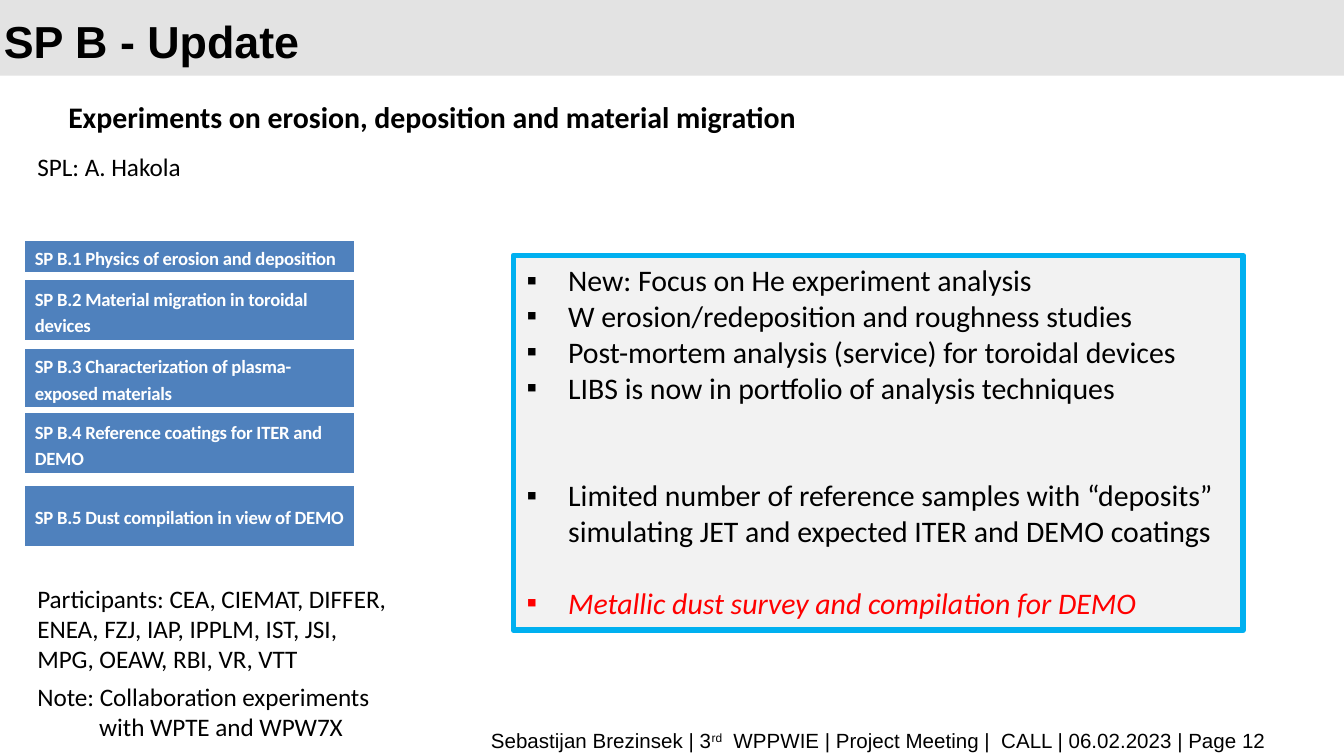
from dataclasses import dataclass

from lxml import etree
from pptx import Presentation
from pptx.dml.color import RGBColor
from pptx.enum.shapes import MSO_SHAPE
from pptx.enum.text import MSO_ANCHOR, PP_ALIGN
from pptx.oxml.ns import qn
from pptx.util import Inches, Pt

RECT = MSO_SHAPE.RECTANGLE
TOP, MID = MSO_ANCHOR.TOP, MSO_ANCHOR.MIDDLE
LEFT, RIGHT, JUST = PP_ALIGN.LEFT, PP_ALIGN.RIGHT, PP_ALIGN.JUSTIFY
WIDE = Inches(10)
HIGH = WIDE * 9 // 16
EDGE, SPAN = 1.8, 24.6
HUE = {"black": "000000", "white": "FFFFFF", "band": "E3E3E3", "blue": "4F81BD",
       "pale": "F2F2F2", "cyan": "00B0F0", "red": "FF0000"}


@dataclass
class Area:
    x: float
    y: float
    w: float
    h: float

    def box(self) -> tuple:
        return (int(WIDE * self.x / 100), int(HIGH * self.y / 100),
                int(WIDE * self.w / 100), int(HIGH * self.h / 100))


@dataclass
class Task:
    text: str
    y: float
    h: float


@dataclass
class Point:
    text: str
    gap: float = 0
    hue: str = "black"
    slant: bool = False


TASKS = [
    Task("SP B.1 Physics of erosion and deposition", 31.82, 4.44),
    Task("SP B.2 Material migration in toroidal devices", 36.98, 8.36),
    Task("SP B.3 Characterization of plasma-exposed materials", 46.04, 8.18),
    Task("SP B.4 Reference coatings for ITER and DEMO", 54.58, 8.36),
    Task("SP B.5 Dust compilation in view of DEMO", 64.18, 8.36),
]
POINTS = [
    Point("New: Focus on He experiment analysis"),
    Point("W erosion/redeposition and roughness studies"),
    Point("Post-mortem analysis (service) for toroidal devices"),
    Point("LIBS is now in portfolio of analysis techniques"),
    Point("Limited number of reference samples with “deposits” simulating JET "
          "and expected ITER and DEMO coatings", 38.5),
    Point("Metallic dust survey and compilation for DEMO", 19.2, "red", True),
]


def tint(name: str) -> RGBColor:
    return RGBColor.from_string(HUE[name])


def style(para, size: float, face: str = "Calibri", hue: str = "black", bold: bool = False) -> None:
    font = para.font
    font.size, font.name, font.bold = Pt(size), face, bold
    font.color.rgb = tint(hue)


def indent(para, left: float, first: float) -> None:
    props = para._p.get_or_add_pPr()
    props.set("marL", str(Inches(left)))
    props.set("indent", str(Inches(first)))


def write(slide, area: Area, lines: list[str], size: float = 13.5, face: str = "Calibri",
          bold: bool = False, align=LEFT, anchor=TOP) -> list:
    frame = slide.shapes.add_textbox(*area.box()).text_frame
    frame.word_wrap, frame.vertical_anchor = True, anchor
    frame.text = "\n".join(lines)
    for para in frame.paragraphs:
        para.alignment = align
        style(para, size, face, bold=bold)
    return list(frame.paragraphs)


def block(slide, area: Area, fill: str, line: str = ""):
    shape = slide.shapes.add_shape(RECT, *area.box())
    shape.shadow.inherit = False
    shape.fill.solid()
    shape.fill.fore_color.rgb = tint(fill)
    if line:
        shape.line.color.rgb = tint(line)
        shape.line.width = Pt(3)
    else:
        shape.line.fill.background()
    return shape


def edges(cell) -> None:
    props = cell._tc.get_or_add_tcPr()
    for spot, (side, width) in enumerate([("L", 1), ("R", 1), ("T", 1), ("B", 3)]):
        line = etree.Element(qn(f"a:ln{side}"), w=str(Pt(width)))
        fill = etree.SubElement(line, qn("a:solidFill"))
        etree.SubElement(fill, qn("a:srgbClr"), val=HUE["white"])
        props.insert(spot, line)


def draw_task(slide, task: Task) -> None:
    area = Area(EDGE, task.y, SPAN, task.h)
    table = slide.shapes.add_table(1, 1, *area.box()).table
    cell = table.cell(0, 0)
    cell.fill.solid()
    cell.fill.fore_color.rgb = tint("blue")
    cell.vertical_anchor = MID
    cell.margin_left = cell.margin_right = Inches(0.08)
    cell.margin_top = cell.margin_bottom = 0
    edges(cell)
    para = cell.text_frame.paragraphs[0]
    para.text = task.text
    para.line_spacing = 1.15
    para.space_before = para.space_after = Pt(2.4)
    style(para, 10, hue="white", bold=True)
    para.runs[0].font._element.set("spc", "-10")


def draw_points(slide, area: Area, points: list[Point]) -> None:
    frame = block(slide, area, "pale", "cyan").text_frame
    frame.word_wrap, frame.vertical_anchor = True, TOP
    frame.text = "\n".join(point.text for point in points)
    for para, point in zip(frame.paragraphs, points):
        para.alignment = LEFT
        if point.gap:
            para.space_before = Pt(point.gap)
        indent(para, 0.31, -0.31)
        props = para._p.get_or_add_pPr()
        etree.SubElement(props, qn("a:buFont"), typeface="Arial")
        etree.SubElement(props, qn("a:buChar"), char="▪")
        style(para, 16, hue=point.hue)
        para.font.italic = point.slant


def main() -> None:
    deck = Presentation()
    deck.slide_width, deck.slide_height = WIDE, HIGH
    slide = deck.slides.add_slide(deck.slide_layouts[6])

    block(slide, Area(0, 0, 100, 10), "band")
    title = write(slide, Area(-0.7, 1.6, 82.5, 6.76), ["SP B - Update"], 24, "Arial", True, anchor=MID)
    title[0].line_spacing = Pt(32)
    head = write(slide, Area(4.1, 11.91, 95.6, 19.91),
                 ["Experiments on erosion, deposition and material migration"],
                 16, bold=True, align=JUST)
    head[0].line_spacing = 1.05
    write(slide, Area(EDGE, 19.2, 24.2, 5.87), ["SPL: A. Hakola"])

    for task in TASKS:
        draw_task(slide, task)

    write(slide, Area(EDGE, 76.27, 28.4, 13.87),
          ["Participants: CEA, CIEMAT, DIFFER, ENEA, FZJ, IAP, IPPLM, IST, JSI, MPG, OEAW, RBI, VR, VTT"])
    note = write(slide, Area(EDGE, 89.24, 28.5, 10.13),
                 ["Note: Collaboration experiments", "with WPTE and WPW7X"])
    indent(note[1], 0.46, 0)
    draw_points(slide, Area(38.2, 33.78, 54.3, 49.6), POINTS)

    foot = write(slide, Area(5.1, 95.47, 90.1, 3.91), ["Sebastijan Brezinsek | 3"],
                 11, "Arial", align=RIGHT)[0]
    mark = foot.add_run()
    mark.text = "rd"
    mark.font._element.set("baseline", "30000")
    foot.add_run().text = "  WPPWIE | Project Meeting |  CALL | 06.02.2023 | Page 12"

    deck.save("out.pptx")


if __name__ == "__main__":
    main()
